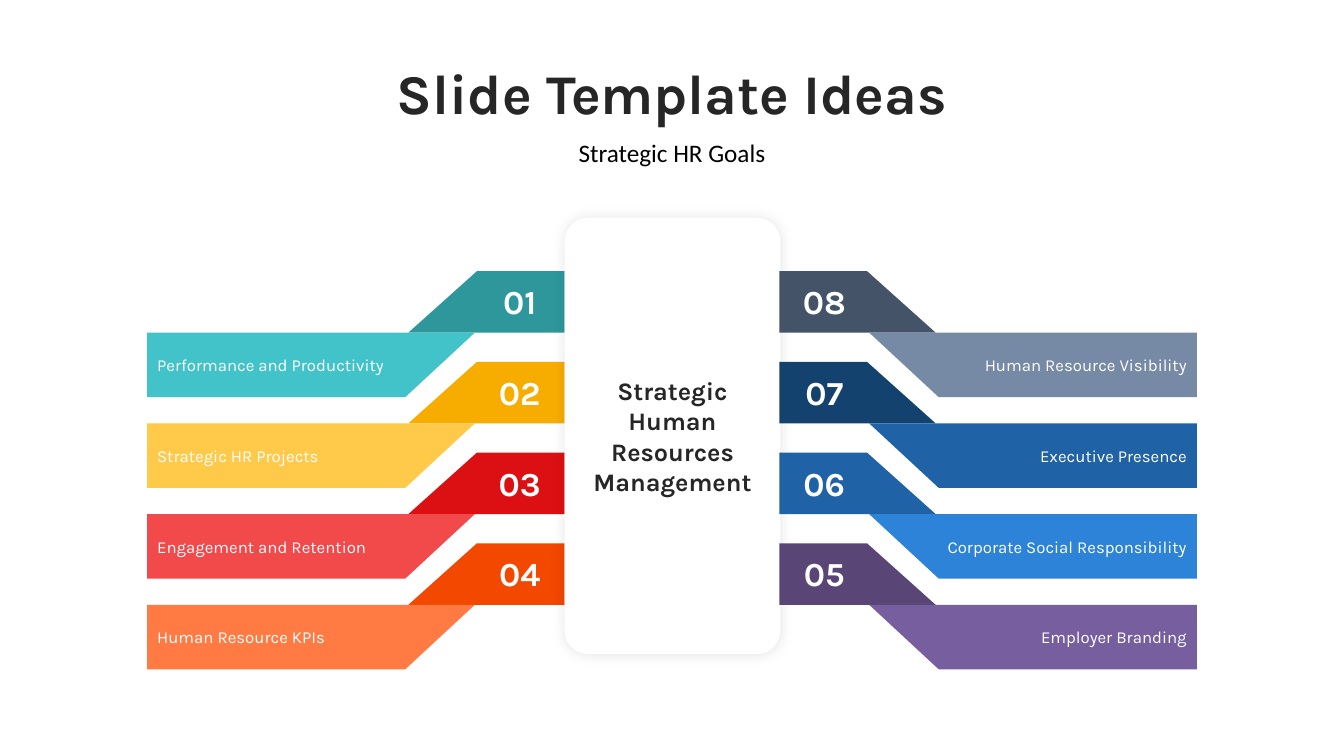
from dataclasses import dataclass

from lxml.etree import SubElement
from pptx import Presentation
from pptx.dml.color import RGBColor as Rgb
from pptx.enum.shapes import MSO_SHAPE as Shape
from pptx.enum.text import MSO_ANCHOR as Anchor, MSO_AUTO_SIZE as Fit, PP_ALIGN as Align
from pptx.oxml.ns import qn
from pptx.util import Inches, Pt

WIDTH, HEIGHT = 13.33, 7.5
TOP, STEP = 2.69, 0.9
TAB_H, BAR_H = 0.61, 0.64
TAB = [(5.6, 0), (4.73, 0), (4.05, TAB_H), (5.6, TAB_H)]
BAR = [(4.02, TAB_H + BAR_H), (1.46, TAB_H + BAR_H), (1.46, TAB_H), (4.71, TAB_H)]
NUM_X, NUM_W, NUM_H = 4.73, 0.85, 0.5

COLORS = {
    "white": "FFFFFF", "black": "000000", "ink": "262626",
    "teal": "2D979C", "aqua": "42C3C9", "amber": "F7AD00", "gold": "FFC94A",
    "red": "DC1012", "coral": "F2494B", "rust": "F24800", "orange": "FF7B43",
    "slate": "445367", "steel": "778AA5", "navy": "14426E", "blue": "1F62A5",
    "sky": "2D83D8", "plum": "594676", "violet": "775E9E",
}


@dataclass
class Goal:
    num: str
    label: str
    tab: str
    bar: str


@dataclass
class Font:
    size: int
    color: str = "white"
    bold: bool = False
    name: str = "Karla"


LEFT = [
    Goal("01", "Performance and Productivity", "teal", "aqua"),
    Goal("02", "Strategic HR Projects", "amber", "gold"),
    Goal("03", "Engagement and Retention", "red", "coral"),
    Goal("04", "Human Resource KPIs", "rust", "orange"),
]
RIGHT = [
    Goal("08", "Human Resource Visibility", "slate", "steel"),
    Goal("07", "Executive Presence", "navy", "blue"),
    Goal("06", "Corporate Social Responsibility", "blue", "sky"),
    Goal("05", "Employer Branding", "plum", "violet"),
]


def rgb(name: str) -> Rgb:
    return Rgb.from_string(COLORS[name])


def paint(shape, color: str) -> None:
    """Give a shape a flat fill with no line or shadow."""
    shape.shadow.inherit = False
    shape.fill.solid()
    shape.fill.fore_color.rgb = rgb(color)
    shape.line.fill.background()


def write(shape, text: str, font: Font, align=Align.CENTER) -> None:
    frame = shape.text_frame
    frame.text = text
    frame.word_wrap = True
    para = frame.paragraphs[0]
    para.alignment = align
    face = para.runs[0].font
    face.name, face.size, face.bold = font.name, Pt(font.size), font.bold
    face.color.rgb = rgb(font.color)


def add_text(slide, box: tuple, text: str, font: Font) -> None:
    shape = slide.shapes.add_textbox(*map(Inches, box))
    write(shape, text, font)
    shape.text_frame.auto_size = Fit.SHAPE_TO_FIT_TEXT


def add_poly(slide, points: list, top: float, flip: bool, color: str):
    """Draw a closed outline, mirrored across the slide when flip is set."""
    spots = [(Inches(WIDTH - x if flip else x), Inches(top + y)) for x, y in points]
    pen = slide.shapes.build_freeform(*spots[0])
    pen.add_line_segments(spots[1:], close=True)
    shape = pen.convert_to_shape()
    paint(shape, color)
    return shape


def add_side(slide, goals: list[Goal], flip: bool) -> None:
    left = WIDTH - NUM_X - NUM_W if flip else NUM_X
    for row, goal in enumerate(goals):
        top = TOP + row * STEP
        add_poly(slide, TAB, top, flip, goal.tab)
        bar = add_poly(slide, BAR, top, flip, goal.bar)
        write(bar, goal.label, Font(12), Align.RIGHT if flip else Align.LEFT)
        bar.text_frame.vertical_anchor = Anchor.MIDDLE
        add_text(slide, (left, top + 0.05, NUM_W, NUM_H), goal.num, Font(24, bold=True))


def add_glow(shape) -> None:
    """Add a soft, centred shadow."""
    props = shape.fill._xPr
    effects = props.find(qn("a:effectLst"))
    shade = SubElement(effects, qn("a:outerShdw"), blurRad=str(Pt(10)), dist="0",
                       dir="0", algn="ctr", rotWithShape="0")
    tint = SubElement(shade, qn("a:srgbClr"), val=COLORS["black"])
    SubElement(tint, qn("a:alpha"), val="10000")


def add_card(slide) -> None:
    box = map(Inches, (5.6, 2.16, 2.14, 4.33))
    card = slide.shapes.add_shape(Shape.ROUNDED_RECTANGLE, *box)
    card.adjustments[0] = 0.11
    paint(card, "white")
    add_glow(card)
    write(card, "Strategic Human Resources Management", Font(18, "ink", True))
    card.text_frame.vertical_anchor = Anchor.MIDDLE


def main() -> None:
    deck = Presentation()
    deck.slide_width, deck.slide_height = Inches(WIDTH), Inches(HEIGHT)
    slide = deck.slides.add_slide(deck.slide_layouts[6])
    add_text(slide, (0, 0.53, WIDTH, 0.77), "Slide Template Ideas", Font(40, "ink", True))
    add_text(slide, (0, 1.31, WIDTH, 0.4), "Strategic HR Goals",
             Font(18, "black", name="Calibri"))
    add_side(slide, LEFT, False)
    add_card(slide)
    add_side(slide, RIGHT, True)
    deck.save("out.pptx")


if __name__ == "__main__":
    main()
